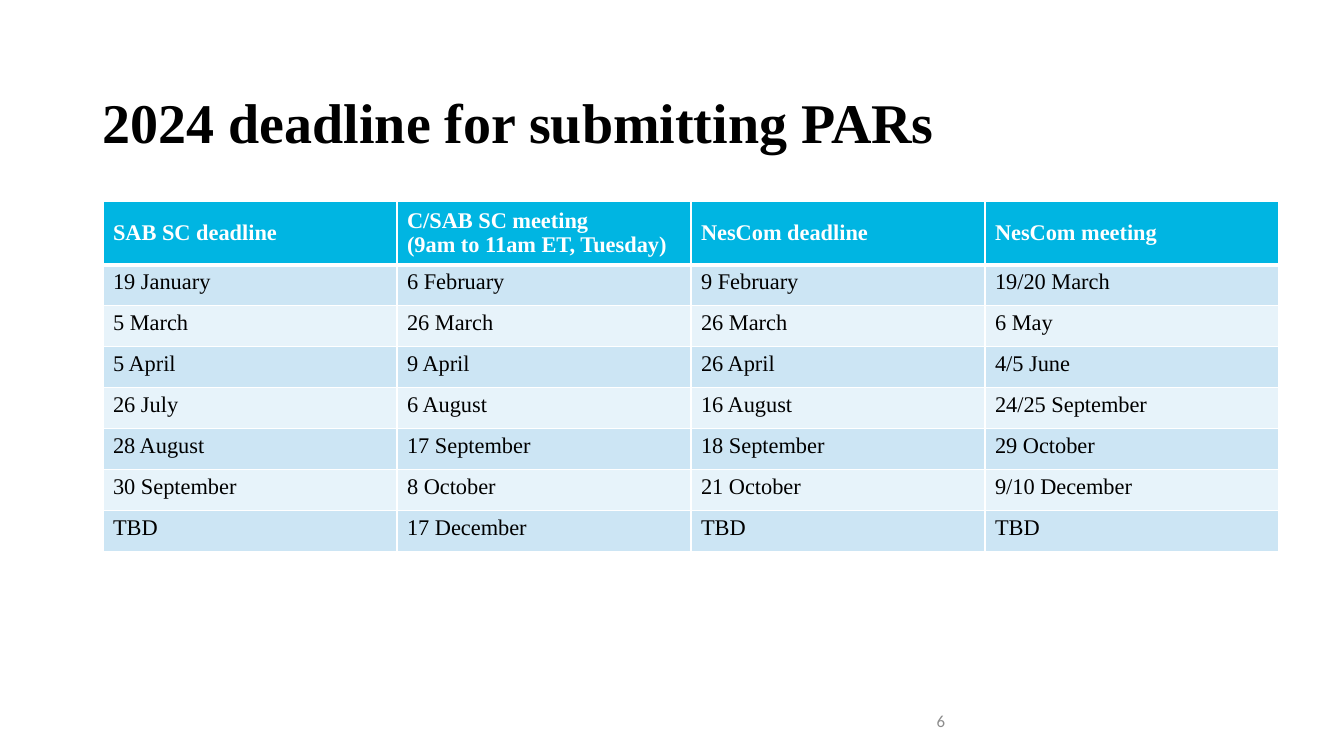
from lxml.etree import SubElement
from pptx import Presentation
from pptx.dml.color import RGBColor
from pptx.enum.text import MSO_ANCHOR, PP_ALIGN
from pptx.oxml.ns import qn
from pptx.util import Emu, Pt

EMU_PER_PX = 914400 / 100.8
COLORS = {
    "black": "000000",
    "white": "FFFFFF",
    "gray": "8C8C8C",
    "header": "00B5E2",
    "odd_row": "CCE5F4",
    "even_row": "E7F3FA",
}
SERIF = "Times New Roman"
COLUMN_WIDTH = 294
HEADER_HEIGHT = 59
ROW_HEIGHT = 41
HEADINGS = [
    "SAB SC deadline",
    "C/SAB SC meeting\n(9am to 11am ET, Tuesday)",
    "NesCom deadline",
    "NesCom meeting",
]
DEADLINES = [
    ["19 January", "6 February", "9 February", "19/20 March"],
    ["5 March", "26 March", "26 March", "6 May"],
    ["5 April", "9 April", "26 April", "4/5 June"],
    ["26 July", "6 August", "16 August", "24/25 September"],
    ["28 August", "17 September", "18 September", "29 October"],
    ["30 September", "8 October", "21 October", "9/10 December"],
    ["TBD", "17 December", "TBD", "TBD"],
]


def px(length):
    return Emu(round(length * EMU_PER_PX))


def color(name):
    return RGBColor.from_string(COLORS[name])


def add_run(paragraph, text, size, font_name, color_name, bold=False):
    run = paragraph.add_run()
    run.text = text
    run.font.size = Pt(size)
    run.font.name = font_name
    run.font.bold = bold
    run.font.color.rgb = color(color_name)


def add_text(slide, box, text, size, font_name, color_name, bold=False,
             alignment=PP_ALIGN.LEFT, line_spacing=1.0):
    shape = slide.shapes.add_textbox(*map(px, box))
    frame = shape.text_frame
    frame.word_wrap = True
    frame.vertical_anchor = MSO_ANCHOR.MIDDLE
    paragraph = frame.paragraphs[0]
    paragraph.alignment = alignment
    paragraph.line_spacing = line_spacing
    add_run(paragraph, text, size, font_name, color_name, bold)


def add_borders(cell, top, bottom):
    properties = cell._tc.get_or_add_tcPr()
    for side, width in (("L", 1), ("R", 1), ("T", top), ("B", bottom)):
        line = SubElement(properties, qn(f"a:ln{side}"), w=str(Pt(width)))
        fill = SubElement(line, qn("a:solidFill"))
        SubElement(fill, qn("a:srgbClr"), val=COLORS["white"])


def fill_cell(cell, text, row_index):
    is_header = row_index == 0
    add_borders(cell, 3 if row_index == 1 else 1, 3 if is_header else 1)
    fill_name = "header" if is_header else ("even_row", "odd_row")[row_index % 2]
    cell.fill.solid()
    cell.fill.fore_color.rgb = color(fill_name)
    cell.vertical_anchor = MSO_ANCHOR.MIDDLE if is_header else MSO_ANCHOR.TOP
    frame = cell.text_frame
    for index, line in enumerate(text.split("\n")):
        paragraph = frame.add_paragraph() if index else frame.paragraphs[0]
        add_run(paragraph, line, 16, SERIF, "white" if is_header else "black", is_header)


def add_deadline_table(slide, left, top):
    rows = [HEADINGS] + DEADLINES
    width = COLUMN_WIDTH * len(HEADINGS)
    height = HEADER_HEIGHT + ROW_HEIGHT * len(DEADLINES)
    table = slide.shapes.add_table(
        len(rows), len(HEADINGS), px(left), px(top), px(width), px(height)
    ).table
    for column in table.columns:
        column.width = px(COLUMN_WIDTH)
    for row_index, texts in enumerate(rows):
        table.rows[row_index].height = px(ROW_HEIGHT if row_index else HEADER_HEIGHT)
        for column_index, text in enumerate(texts):
            fill_cell(table.cell(row_index, column_index), text, row_index)


def main():
    presentation = Presentation()
    presentation.slide_width = px(1344)
    presentation.slide_height = px(756)
    slide = presentation.slides.add_slide(presentation.slide_layouts[6])
    add_text(slide, (93, 65, 1159, 121), "2024 deadline for submitting PARs",
             40, SERIF, "black", bold=True, line_spacing=0.9)
    add_text(slide, (653, 701, 302, 40), "6", 12, "Calibri", "gray",
             alignment=PP_ALIGN.RIGHT)
    add_deadline_table(slide, 103, 201)
    presentation.save("out.pptx")


if __name__ == "__main__":
    main()
